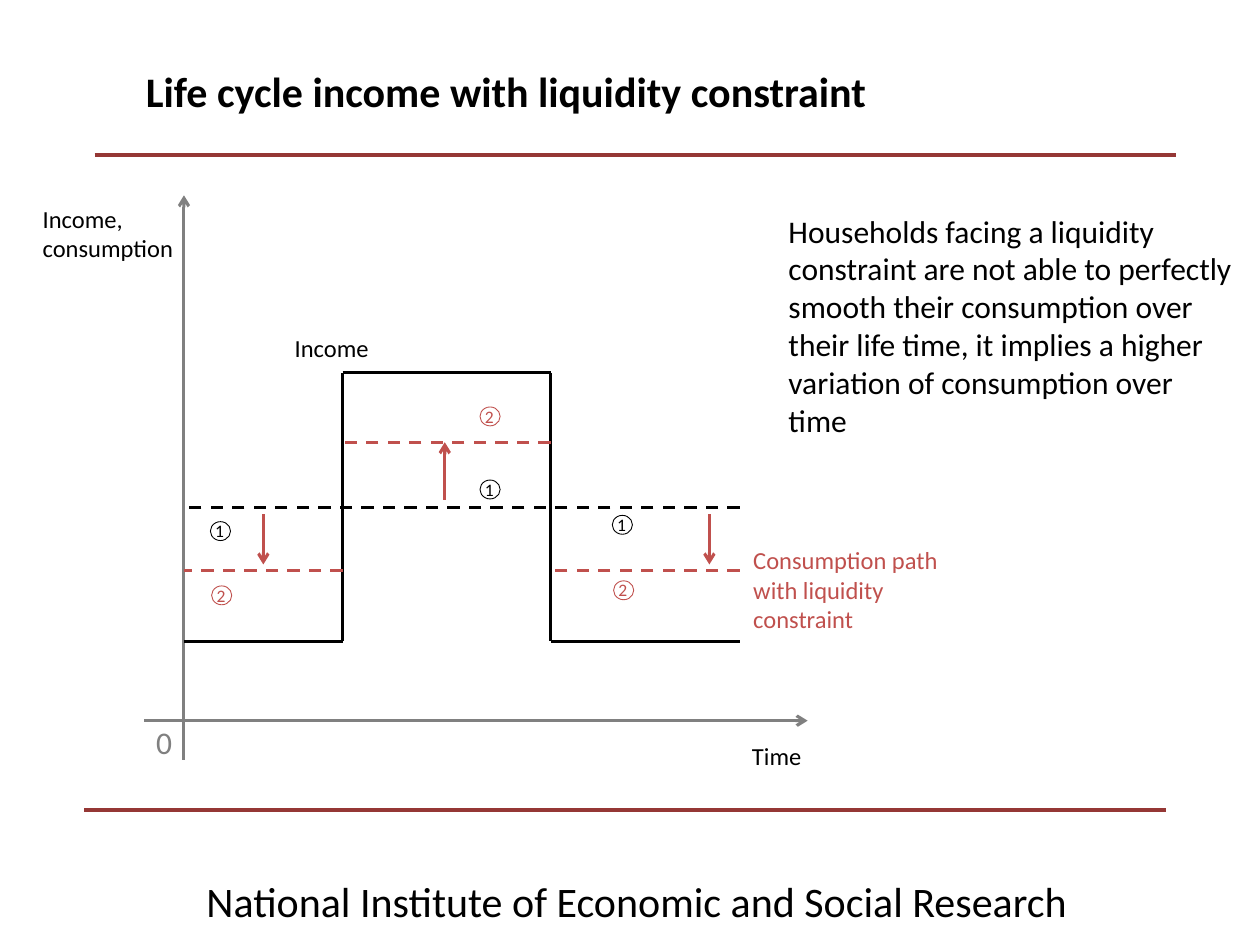
from dataclasses import dataclass
from itertools import pairwise

from lxml.etree import SubElement
from pptx import Presentation
from pptx.dml.color import RGBColor
from pptx.enum.dml import MSO_LINE
from pptx.enum.shapes import MSO_CONNECTOR as CONN, MSO_SHAPE as SHAPE
from pptx.oxml.ns import qn
from pptx.util import Inches, Pt


@dataclass(frozen=True)
class Theme:
    font: str = "Calibri"
    ink: str = "000000"
    axis: str = "808080"
    accent: str = "C0504D"
    rule: str = "953735"
    title: int = 24
    body: int = 18
    label: int = 14
    marker: int = 10
    rule_width: float = 2.25
    line_width: float = 1.75
    ring_width: float = 0.5


THEME = Theme()

# Positions on the chart, in inches
AXIS_X, AXIS_Y = 1.46, 5.72
RISE_X, FALL_X, END_X = 2.72, 4.37, 5.87
LOW_Y, HIGH_Y = 5.09, 2.96
SMOOTH_Y, CUT_Y, RAISED_Y = 4.03, 4.53, 3.51

INCOME_PATH = [(AXIS_X, LOW_Y), (RISE_X, LOW_Y), (RISE_X, HIGH_Y),
               (FALL_X, HIGH_Y), (FALL_X, LOW_Y), (END_X, LOW_Y)]

# Left and top of each numbered ring
RINGS = {
    "1": [(4.86, 4.09), (1.67, 4.14), (3.81, 3.81)],
    "2": [(4.87, 4.61), (1.68, 4.65), (3.81, 3.23)],
}


def add_line(slide, start, end, color, width=THEME.line_width, dashed=False, arrow=False):
    """Draw a straight line; an arrow points at its start."""
    s = slide.shapes.add_connector(CONN.STRAIGHT, *map(Inches, (*start, *end)))
    s.line.color.rgb = RGBColor.from_string(color)
    s.line.width = Pt(width)
    if dashed:
        s.line.dash_style = MSO_LINE.DASH
    sp_pr = s._element.spPr
    if arrow:
        SubElement(sp_pr.find(qn("a:ln")), qn("a:headEnd"), type="arrow")
    SubElement(sp_pr, qn("a:effectLst"))


def add_text(slide, box, paragraphs, size, color=THEME.ink, bold=False):
    s = slide.shapes.add_textbox(*map(Inches, box))
    tf = s.text_frame
    tf.word_wrap = True
    tf.text = "\n".join(paragraphs)
    font_format = {"name": THEME.font, "size": Pt(size), "bold": bold}
    for p in tf.paragraphs:
        for r in p.runs:
            for name, value in font_format.items():
                setattr(r.font, name, value)
            r.font.color.rgb = RGBColor.from_string(color)


def add_ring(slide, left, top, number, color):
    """Draw a small circle with a number in it."""
    add_text(slide, (left - 0.06, top - 0.06, 0.31, 0.27), [number], THEME.marker, color)
    s = slide.shapes.add_shape(SHAPE.OVAL, *map(Inches, (left, top, 0.16, 0.15)))
    s.shadow.inherit = False
    s.fill.background()
    s.line.color.rgb = RGBColor.from_string(color)
    s.line.width = Pt(THEME.ring_width)


def add_frame(slide):
    """Add the title, the two rules and the footer."""
    for left, y in ((0.75, 1.23), (0.67, 6.43)):
        add_line(slide, (left, y), (left + 8.58, y), THEME.rule, THEME.rule_width)
    add_text(slide, (1.54, 6.9, 7.95, 0.4),
             ["National Institute of Economic and Social Research"], THEME.title)
    add_text(slide, (1.06, 0.47, 8.03, 0.5),
             ["Life cycle income with liquidity constraint"], THEME.title, bold=True)


def add_curves(slide):
    add_line(slide, (AXIS_X, 1.55), (AXIS_X, 6.03), THEME.axis, arrow=True)
    add_line(slide, (6.41, AXIS_Y), (1.14, AXIS_Y), THEME.axis, arrow=True)
    for start, end in pairwise(INCOME_PATH):
        add_line(slide, start, end, THEME.ink)

    for right, left, y, color in (
        (END_X, AXIS_X, SMOOTH_Y, THEME.ink),
        (RISE_X, AXIS_X, CUT_Y, THEME.accent),
        (FALL_X, RISE_X, RAISED_Y, THEME.accent),
        (END_X, FALL_X, CUT_Y, THEME.accent),
    ):
        add_line(slide, (right, y), (left, y), color, dashed=True)

    for x, tip, base in ((2.09, 4.48, 4.08), (3.53, RAISED_Y, 3.97), (5.63, 4.48, 4.08)):
        add_line(slide, (x, tip), (x, base), THEME.accent, arrow=True)


def add_labels(slide):
    add_text(slide, (0.24, 1.57, 1.57, 0.57), ["Income,", "consumption"], THEME.label)
    add_text(slide, (2.24, 2.59, 1.97, 0.34), ["Income"], THEME.label)
    add_text(slide, (5.87, 5.83, 1.34, 0.64), ["Time"], THEME.label)
    add_text(slide, (1.14, 5.69, 1.34, 0.4), ["0"], THEME.body, THEME.axis)
    add_text(slide, (5.88, 4.28, 1.97, 0.81),
             ["Consumption path", "with liquidity constraint"], THEME.label, THEME.accent)
    add_text(slide, (6.16, 1.63, 3.73, 1.92),
             ["Households facing a liquidity constraint are not able to perfectly smooth "
              "their consumption over their life time, it implies a higher variation of "
              "consumption over time"], THEME.body)
    for number, color in (("1", THEME.ink), ("2", THEME.accent)):
        for left, top in RINGS[number]:
            add_ring(slide, left, top, number, color)


def main():
    prs = Presentation()
    prs.slide_width, prs.slide_height = Inches(10), Inches(7.5)
    slide = prs.slides.add_slide(prs.slide_layouts[6])
    add_frame(slide)
    add_curves(slide)
    add_labels(slide)
    prs.save("out.pptx")


if __name__ == "__main__":
    main()
